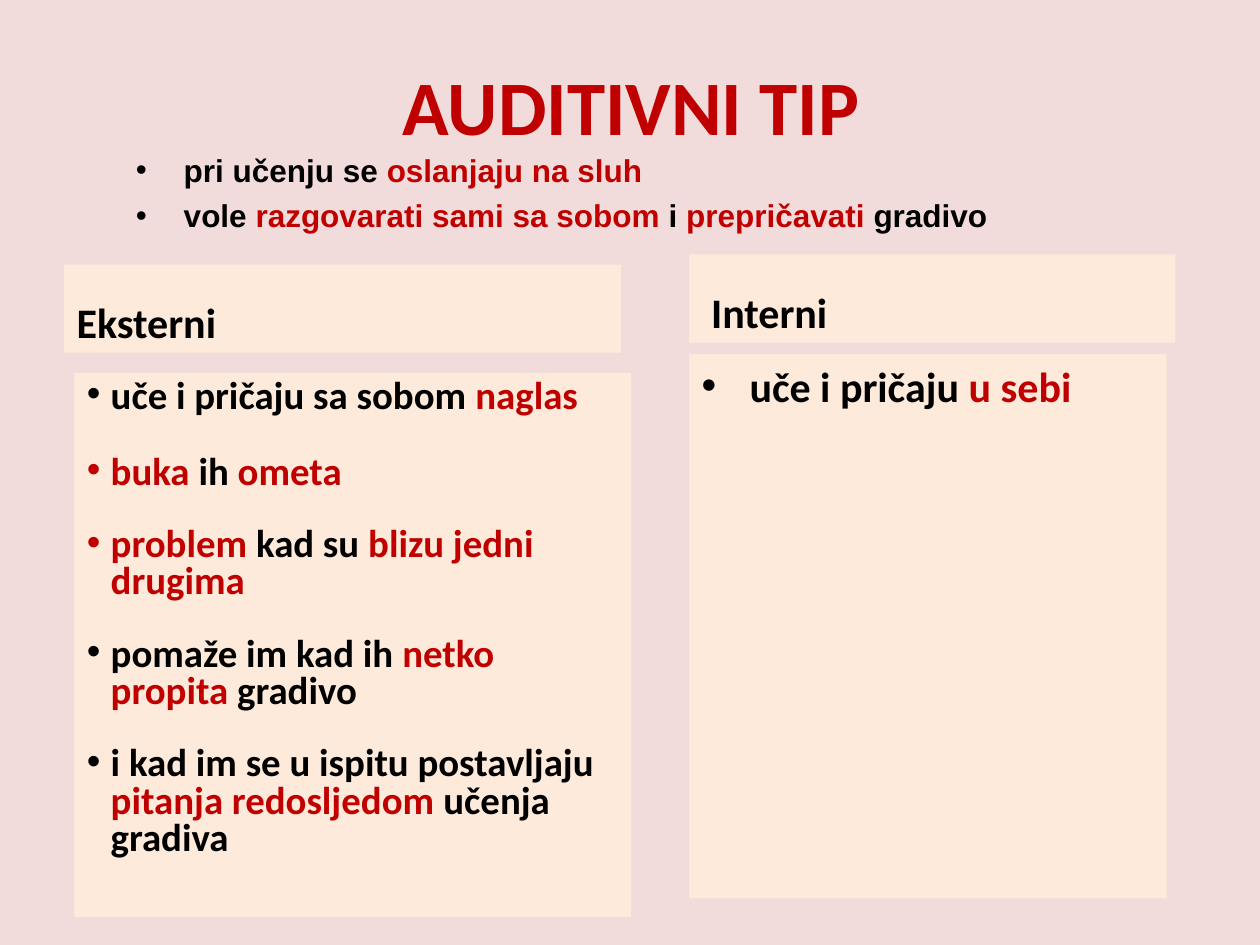
from lxml.etree import SubElement
from pptx import Presentation
from pptx.dml.color import RGBColor
from pptx.enum.shapes import MSO_SHAPE
from pptx.enum.text import MSO_ANCHOR, PP_ALIGN
from pptx.oxml.ns import qn
from pptx.util import Inches, Pt

COLORS = {"back": "F2DCDB", "panel": "FDEADA", "text": "000000", "key": "C00000"}


def color(name):
    return RGBColor.from_string(COLORS[name])


class Deck:
    """Holds the style and the current slide."""

    style = {"name": "Calibri", "bold": True}

    def __init__(self, prs):
        self.slide = prs.slides.add_slide(prs.slide_layouts[5])
        fill = self.slide.background.fill
        fill.solid()
        fill.fore_color.rgb = color("back")

    def title(self, text, box):
        shape = self.slide.shapes.title
        names = ("left", "top", "width", "height")
        for name, value in zip(names, box):
            setattr(shape, name, Inches(value))
        self.label(shape, [f"*{text}*"], 44, PP_ALIGN.CENTER, MSO_ANCHOR.MIDDLE)

    def panel(self, box, lines, size, **form):
        shape = self.slide.shapes.add_shape(MSO_SHAPE.RECTANGLE, *map(Inches, box))
        shape.shadow.inherit = False
        shape.fill.solid()
        shape.fill.fore_color.rgb = color("panel")
        shape.line.fill.background()
        self.label(shape, lines, size, **form)

    def note(self, box, lines, size, **form):
        shape = self.slide.shapes.add_textbox(*map(Inches, box))
        self.label(shape, lines, size, **form)

    def label(self, shape, lines, size, align=PP_ALIGN.LEFT, anchor=MSO_ANCHOR.TOP,
              indent=0, gaps=(), font="Calibri", **space):
        """Words between asterisks take the key colour."""
        frame = shape.text_frame
        frame.word_wrap = True
        frame.vertical_anchor = anchor
        for i, line in enumerate(lines):
            para = frame.paragraphs[0] if i == 0 else frame.add_paragraph()
            form = {"alignment": align, **space}
            if gaps:
                form["space_before"] = Pt(gaps[i])
            for name, value in form.items():
                setattr(para, name, value)
            if indent:
                self.bullet(para, indent)
            for j, part in enumerate(line.split("*")):
                if part:
                    run = para.add_run()
                    run.text = part
                    look = {**self.style, "name": font, "size": Pt(size)}
                    for name, value in look.items():
                        setattr(run.font, name, value)
                    run.font.color.rgb = color("key" if j % 2 else "text")

    def bullet(self, para, indent):
        props = para._p.get_or_add_pPr()
        props.set("marL", str(Inches(indent)))
        props.set("indent", str(-Inches(indent)))
        SubElement(props, qn("a:buFont")).set("typeface", "Arial")
        SubElement(props, qn("a:buChar")).set("char", "•")


def main():
    prs = Presentation()
    prs.slide_width, prs.slide_height = Inches(10), Inches(7.5)
    deck = Deck(prs)

    # Title
    deck.title("AUDITIVNI TIP", (0.51, 0.21, 9, 1.25))

    # External learners
    deck.panel((0.51, 2.1, 4.42, 0.7), ["Eksterni"], 24, anchor=MSO_ANCHOR.BOTTOM)
    deck.panel((0.59, 2.96, 4.42, 4.32), [
        "uče i pričaju sa sobom *naglas*",
        "*buka* ih* ometa*",
        "*problem* kad su *blizu jedni drugima*",
        "pomaže im kad ih *netko propita *gradivo",
        "i kad im se u ispitu postavljaju *pitanja redosljedom *učenja gradiva",
    ], 22.2, indent=0.19, gaps=(19, 19, 16.7, 16.7, 16.7),
        line_spacing=0.8, space_after=Pt(3.3))

    # Internal learners
    deck.panel((5.47, 2.02, 3.86, 0.7), [" Interni"], 24, anchor=MSO_ANCHOR.BOTTOM)
    deck.panel((5.47, 2.81, 3.79, 4.32), ["uče i pričaju *u sebi*"], 24,
               indent=0.38, gaps=(4.8,))

    # Shared traits
    deck.note((0.98, 1.15, 8.52, 0.94), [
        "pri učenju se *oslanjaju na sluh*",
        "vole *razgovarati sami sa sobom *i *prepričavati* gradivo",
    ], 18, indent=0.38, gaps=(4.3, 4.3), font="Arial")

    prs.save("out.pptx")


if __name__ == "__main__":
    main()
